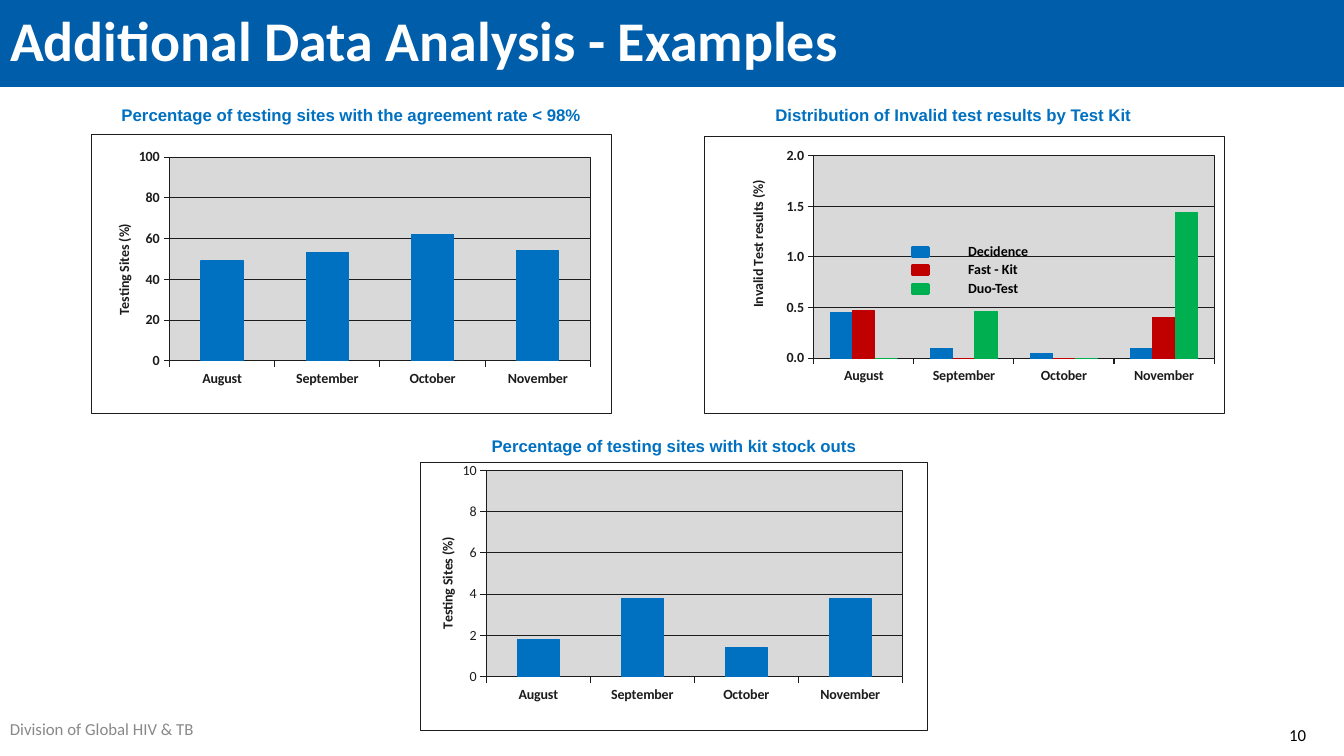
from lxml import etree
from pptx import Presentation
from pptx.chart.data import CategoryChartData
from pptx.dml.color import RGBColor
from pptx.enum.chart import XL_CHART_TYPE, XL_TICK_MARK
from pptx.enum.shapes import MSO_SHAPE
from pptx.enum.text import MSO_ANCHOR, PP_ALIGN
from pptx.oxml import parse_xml
from pptx.oxml.ns import nsdecls, qn
from pptx.util import Pt

COLUMNS = XL_CHART_TYPE.COLUMN_CLUSTERED
TICK_OUT, TICK_NONE = XL_TICK_MARK.OUTSIDE, XL_TICK_MARK.NONE
LEFT, CENTER, RIGHT = PP_ALIGN.LEFT, PP_ALIGN.CENTER, PP_ALIGN.RIGHT
TOP, MIDDLE = MSO_ANCHOR.TOP, MSO_ANCHOR.MIDDLE
RECTANGLE = MSO_SHAPE.RECTANGLE

BANNER, WHITE, BLACK, GREY = "005DAA", "FFFFFF", "000000", "898989"
BLUE, RED, GREEN = "0070C0", "C00000", "00B050"
INK, PLOT_GREY = "1C1C1C", "D9D9D9"
MONTHS = ["August", "September", "October", "November"]
KIT_COLORS = [BLUE, RED, GREEN]


def rgb(hex_color):
    return RGBColor.from_string(hex_color)


def paint(fill, color):
    fill.solid()
    fill.fore_color.rgb = rgb(color)


def stroke(line, color, width=0.75):
    line.color.rgb = rgb(color)
    line.width = Pt(width)


def style_font(font, name, size, color, bold=False):
    font.name, font.size, font.bold = name, Pt(size), bold
    font.color.rgb = rgb(color)


def add_label(shapes, box, text, font, align=LEFT, anchor=TOP):
    """Add one line of text; font is (name, size, color, bold)."""
    label = shapes.add_textbox(*map(Pt, box))
    frame = label.text_frame
    frame.word_wrap = True
    frame.vertical_anchor = anchor
    frame.text = text
    paragraph = frame.paragraphs[0]
    paragraph.alignment = align
    style_font(paragraph.runs[0].font, *font)


def set_layout(parent, index, **parts):
    """Give a chart part a manual position in fractions of the chart."""
    for old in parent.findall(qn("c:layout")):
        parent.remove(old)
    layout = parse_xml(f"<c:layout {nsdecls('c')}><c:manualLayout/></c:layout>")
    for tag, value in parts.items():
        etree.SubElement(layout[0], qn(f"c:{tag}")).set("val", str(value))
    parent.insert(index, layout)


def area_format(fill, line):
    return parse_xml(
        f"<c:spPr {nsdecls('c', 'a')}>"
        f'<a:solidFill><a:srgbClr val="{fill}"/></a:solidFill>'
        f'<a:ln w="{Pt(0.75)}"><a:solidFill><a:srgbClr val="{line}"/>'
        "</a:solidFill></a:ln></c:spPr>")


def style_axis(axis, bold):
    axis.major_tick_mark, axis.minor_tick_mark = TICK_OUT, TICK_NONE
    stroke(axis.format.line, INK)
    style_font(axis.tick_labels.font, "Calibri", 10, INK, bold)


def style_value_axis(axis, title, title_at, maximum, step, number_format, bold):
    style_axis(axis, bold)
    axis.minimum_scale, axis.maximum_scale = 0, maximum
    axis.major_unit = step
    axis.tick_labels.number_format = number_format
    axis.tick_labels.number_format_is_linked = False
    stroke(axis.major_gridlines.format.line, INK)
    frame = axis.axis_title.text_frame
    frame.text = title
    style_font(frame.paragraphs[0].runs[0].font, "Calibri", 10, INK, True)
    title_xml = axis.axis_title._element
    for body in title_xml.iter(qn("a:bodyPr")):
        body.set("rot", "-5400000")
        body.set("vert", "horz")
    x, y = title_at
    set_layout(title_xml, 1, xMode="edge", yMode="edge", x=x, y=y)


def add_chart_panel(slide, box, caption, caption_offset, series, plot, **value_axis):
    """Column chart in box with its caption above, shifted by caption_offset."""
    left, top, width, _ = box
    dx, dy = caption_offset
    add_label(slide.shapes, (left + dx, top + dy, width, 22), caption,
              ("Arial", 12, BLUE, True), CENTER)

    data = CategoryChartData()
    data.categories = MONTHS
    for name, values in series.items():
        data.add_series(name, values)
    chart = slide.shapes.add_chart(COLUMNS, *map(Pt, box), data).chart
    chart.has_title = chart.has_legend = False
    style_font(chart.font, "Calibri", 10, INK)

    columns = chart.plots[0]
    columns.vary_by_categories = False
    columns.gap_width, columns.overlap = 150, 0
    for column, color in zip(columns.series, KIT_COLORS):
        paint(column.format.fill, color)
        stroke(column.format.line, color)
    style_axis(chart.category_axis, True)
    style_value_axis(chart.value_axis, **value_axis)

    chart_xml = chart._chartSpace.find(qn("c:chart"))
    chart_xml.addnext(area_format(WHITE, INK))
    plot_area = chart_xml.find(qn("c:plotArea"))
    plot_area.append(area_format(PLOT_GREY, INK))
    x, y, w, h = plot
    set_layout(plot_area, 0, layoutTarget="inner", xMode="edge", yMode="edge",
               x=x, y=y, w=w, h=h)


def add_kit_legend(slide, left, top, kits):
    legend = slide.shapes.add_group_shape()
    for row, (kit, color) in enumerate(zip(kits, KIT_COLORS)):
        y = top + row * 13.3
        swatch = legend.shapes.add_shape(
            RECTANGLE, *map(Pt, (left, y, 11.5, 6.5)))
        swatch.shadow.inherit = False
        paint(swatch.fill, color)
        stroke(swatch.line, color, 2)
        add_label(legend.shapes, (left + 33, y - 7, 80, 19.5), kit,
                  ("Calibri", 10, BLACK, True))


def add_banner(slide, box, text):
    banner = slide.shapes.title
    banner.left, banner.top, banner.width, banner.height = map(Pt, box)
    paint(banner.fill, BANNER)
    banner.text_frame.text = text
    banner.text_frame.vertical_anchor = MIDDLE
    paragraph = banner.text_frame.paragraphs[0]
    paragraph.alignment, paragraph.line_spacing = LEFT, 0.9
    style_font(paragraph.runs[0].font, "Calibri", 40, WHITE, True)


def add_footer(slide, top):
    add_label(slide.shapes, (0, top, 156, 29), "Division of Global HIV & TB",
              ("Calibri", 12, GREY))
    add_label(slide.shapes, (857, top, 83, 29), "10",
              ("Calibri", 12, BLACK), RIGHT, MIDDLE)


def main():
    deck = Presentation()
    deck.slide_width, deck.slide_height = Pt(960), Pt(540)
    slide = deck.slides.add_slide(deck.slide_layouts[5])
    add_banner(slide, (0, 0, 960, 62), "Additional Data Analysis - Examples")
    add_footer(slide, 510)

    add_chart_panel(
        slide, (300, 330, 363, 192),
        "Percentage of testing sites with kit stock outs", (0, -22.5),
        {"Testing Sites (%)": [1.8, 3.8, 1.4, 3.8]}, (0.13, 0.03, 0.82, 0.77),
        title="Testing Sites (%)", title_at=(0.03, 0.27),
        maximum=10, step=2, number_format="0", bold=False)
    add_chart_panel(
        slide, (65, 96, 372, 200),
        "Percentage of testing sites with the agreement rate < 98%", (0, -25),
        {"Testing Sites (%)": [49, 53, 62, 54]}, (0.15, 0.08, 0.81, 0.73),
        title="Testing Sites (%)", title_at=(0.04, 0.31),
        maximum=100, step=20, number_format="0", bold=True)

    invalid_results = {
        "Decidence": [0.45, 0.1, 0.05, 0.1],
        "Fast - Kit": [0.47, 0, 0, 0.4],
        "Duo-Test": [0, 0.46, 0, 1.44],
    }
    add_chart_panel(
        slide, (503, 97, 372, 199),
        "Distribution of Invalid test results by Test Kit", (-8, -26),
        invalid_results, (0.21, 0.07, 0.77, 0.73),
        title="Invalid Test results (%)", title_at=(0.08, 0.15),
        maximum=2, step=0.5, number_format="0.0", bold=True)
    add_kit_legend(slide, 651.5, 176.5, invalid_results)
    deck.save("out.pptx")


if __name__ == "__main__":
    main()
